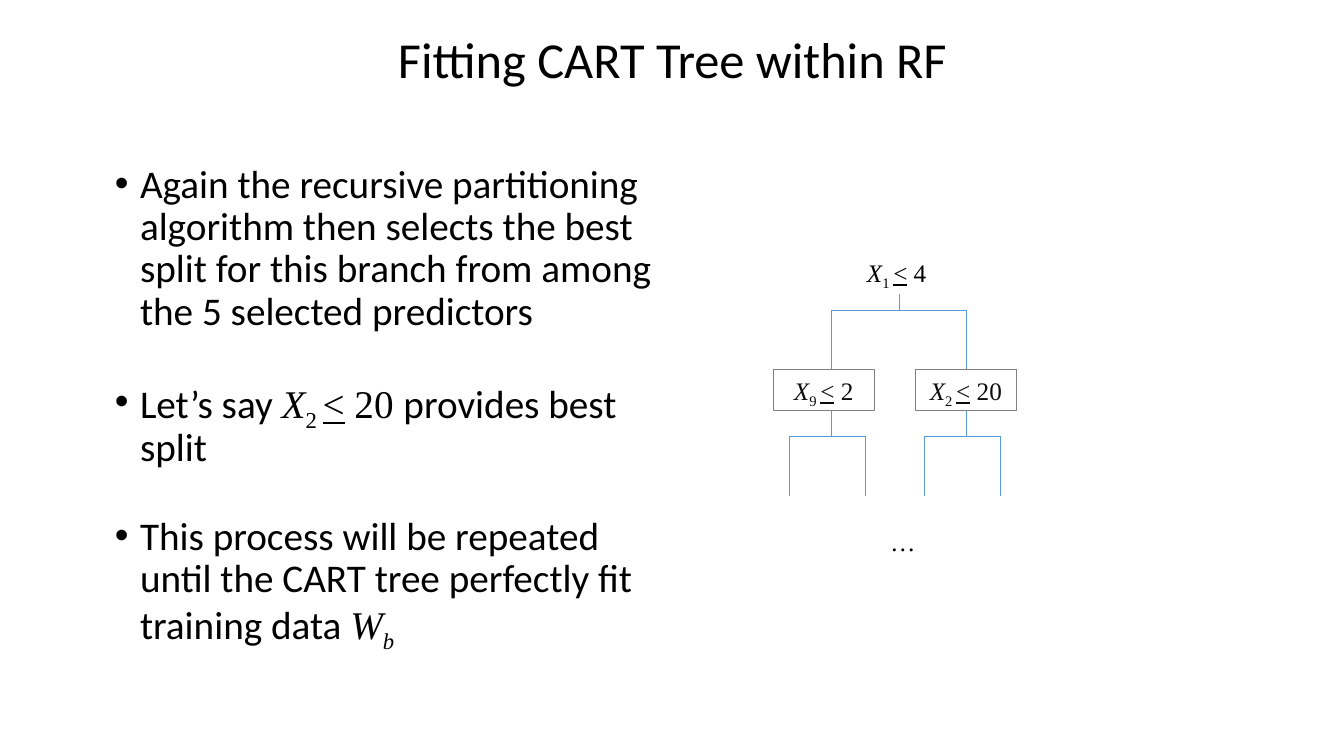
import pptx
import pptx.dml.color
import pptx.enum.shapes
import pptx.enum.text
import pptx.oxml.ns
import pptx.util
from lxml import etree

Inches, Pt = pptx.util.Inches, pptx.util.Pt
RGBColor = pptx.dml.color.RGBColor
PP_ALIGN = pptx.enum.text.PP_ALIGN
MSO_ANCHOR = pptx.enum.text.MSO_ANCHOR

BLACK = RGBColor(0x00, 0x00, 0x00)
NODE_TEXT = RGBColor(0x0D, 0x0D, 0x0D)
NODE_BORDER = RGBColor(0x80, 0x80, 0x80)
BRANCH_BLUE = RGBColor(0x5B, 0x9B, 0xD5)
BODY_FONT, MATH_FONT = "Calibri", "Times New Roman"


def rule(index, limit):
    """Runs of a split rule such as X1 <= 4."""
    return [("X", "italic"), (f"{index} ", "sub"), ("<", "underline"), (f" {limit}", "math")]


# Content: each paragraph is a list of (text, style) runs
TITLE = [("Fitting CART Tree within RF", "plain")]
BULLETS = [
    [("Again the recursive partitioning algorithm then selects the best split "
      "for this branch from among the 5 selected predictors", "plain")],
    [("Let’s say ", "plain"), *rule(2, "20 "), ("provides best split", "plain")],
    [("This process will be repeated until the CART tree perfectly fit training data ", "plain"),
     ("W", "italic"), ("b", "italic sub")],
]
# Free labels: left, top, width, runs
LABELS = [(8.5, 2.5, 0.86, rule(1, 4)), (8.75, 5.17, 0.43, [("…", "italic")])]
# Boxed nodes: left, runs
NODES = [(7.67, rule(9, 2)), (9.08, rule(2, 20))]
NODE_TOP, NODE_WIDTH, NODE_HEIGHT = 3.67, 1, 0.4
# Forks: stem x, stem top, bar y, left x, right x, bottom
FORKS = [
    (8.92, 2.92, 3.08, 8.25, 9.58, NODE_TOP),
    (8.25, 4.08, 4.33, 7.83, 8.58, 4.92),
    (9.58, 4.08, 4.33, 9.17, 9.92, 4.92),
]

presentation = pptx.Presentation()
presentation.slide_width, presentation.slide_height = Inches(13.33), Inches(7.5)
slide = presentation.slides.add_slide(presentation.slide_layouts[6])


def write_runs(paragraph, runs, size, color=BLACK):
    for text, style in runs:
        run = paragraph.add_run()
        run.text = text
        font = run.font
        font.size, font.color.rgb = Pt(size), color
        font.name = BODY_FONT if style == "plain" else MATH_FONT
        font.italic = "italic" in style
        font.underline = style == "underline"
        if "sub" in style:
            font._element.set("baseline", "-25000")


def add_text_box(left, top, width, height, wrap=True):
    box = slide.shapes.add_textbox(Inches(left), Inches(top), Inches(width), Inches(height))
    box.text_frame.word_wrap = wrap
    return box.text_frame


def add_branch(x1, y1, x2, y2):
    line = slide.shapes.add_connector(
        pptx.enum.shapes.MSO_CONNECTOR.STRAIGHT, Inches(x1), Inches(y1), Inches(x2), Inches(y2))
    line.line.color.rgb, line.line.width = BRANCH_BLUE, Pt(0.5)
    etree.SubElement(line._element.spPr, pptx.oxml.ns.qn("a:effectLst"))


def add_bullet(paragraph):
    properties = paragraph._p.get_or_add_pPr()
    properties.set("marL", str(Inches(0.25)))
    properties.set("indent", str(Inches(-0.25)))
    etree.SubElement(properties, pptx.oxml.ns.qn("a:buFont")).set("typeface", "Arial")
    etree.SubElement(properties, pptx.oxml.ns.qn("a:buChar")).set("char", "•")


# Title
frame = add_text_box(2.17, 0, 9, 1.23)
frame.vertical_anchor = MSO_ANCHOR.MIDDLE
title = frame.paragraphs[0]
title.alignment, title.line_spacing = PP_ALIGN.CENTER, 0.9
write_runs(title, TITLE, 36)

# Bullets
frame = add_text_box(1.04, 1.58, 5.71, 5.25)
for number, runs in enumerate(BULLETS):
    paragraph = frame.add_paragraph() if number else frame.paragraphs[0]
    paragraph.line_spacing = 0.9
    paragraph.space_before = Pt(33 if number else 10)
    add_bullet(paragraph)
    write_runs(paragraph, runs, 28)

# Tree branches: stem, bar and two legs per fork
for stem, top, bar, left, right, bottom in FORKS:
    add_branch(stem, top, stem, bar)
    add_branch(left, bar, right, bar)
    for leg in (left, right):
        add_branch(leg, bar, leg, bottom)

# Tree labels and boxed nodes
for left, top, width, runs in LABELS:
    frame = add_text_box(left, top, width, NODE_HEIGHT, wrap=False)
    frame.auto_size = pptx.enum.text.MSO_AUTO_SIZE.SHAPE_TO_FIT_TEXT
    write_runs(frame.paragraphs[0], runs, 18)

for left, runs in NODES:
    node = slide.shapes.add_shape(
        pptx.enum.shapes.MSO_SHAPE.RECTANGLE,
        Inches(left), Inches(NODE_TOP), Inches(NODE_WIDTH), Inches(NODE_HEIGHT))
    node.shadow.inherit = False
    node.fill.background()
    node.line.color.rgb, node.line.width = NODE_BORDER, Pt(0.75)
    frame = node.text_frame
    frame.word_wrap = True
    frame.auto_size = pptx.enum.text.MSO_AUTO_SIZE.SHAPE_TO_FIT_TEXT
    frame.vertical_anchor = MSO_ANCHOR.TOP
    frame.paragraphs[0].alignment = PP_ALIGN.CENTER
    write_runs(frame.paragraphs[0], runs, 18, NODE_TEXT)

presentation.save("out.pptx")
